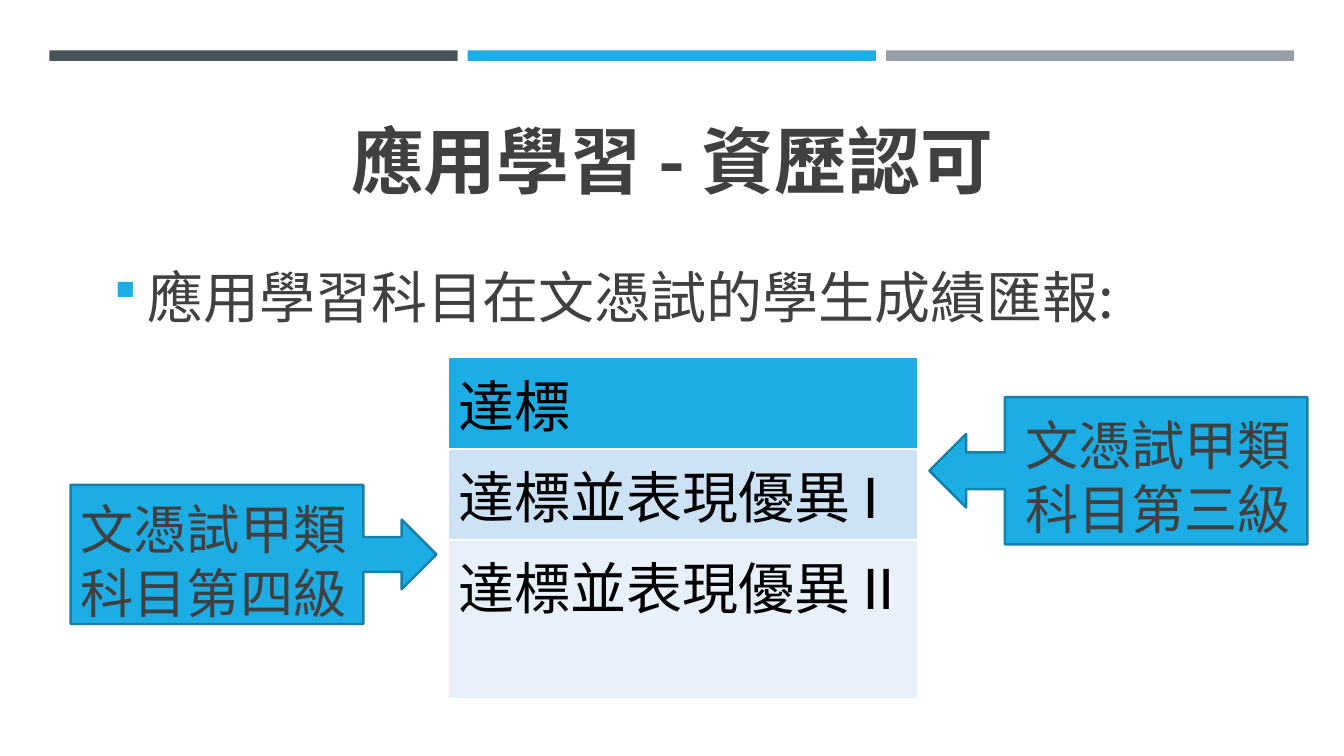
from pptx import Presentation
from pptx.dml.color import RGBColor
from pptx.enum.shapes import MSO_SHAPE as Kind
from pptx.enum.text import MSO_ANCHOR as Anchor, MSO_AUTO_SIZE as Fit, PP_ALIGN as Align
from pptx.oxml import parse_xml
from pptx.oxml.ns import nsdecls, qn
from pptx.util import Pt

INK, SKY, EDGE = "404040", "1CADE4", "1580A9"
CJK, LATIN = "Noto Sans CJK TC", "Lato"


def tint(part, code):
    """Give a fill a solid colour."""
    part.solid()
    part.fore_color.rgb = RGBColor.from_string(code)


def write(frame, text, size=40, color=INK, font=CJK, bold=False,
          align=Align.LEFT, anchor=Anchor.MIDDLE, space=None):
    """Fill a text frame, one paragraph per line of text."""
    frame.text = text
    frame.word_wrap = True
    frame.vertical_anchor = anchor
    for para in frame.paragraphs:
        para.alignment = align
        para.line_spacing = space
        for run in para.runs:
            face = run.font
            face.size, face.bold, face.name = Pt(size), bold, font
            tint(face.fill, color)
            east = face._element.makeelement(qn("a:ea"), {"typeface": CJK})
            face._element.find(qn("a:latin")).addnext(east)


def place(shape, *box):
    shape.left, shape.top, shape.width, shape.height = map(Pt, box)


class Page:
    def __init__(self, deck):
        self.slide = deck.slides.add_slide(deck.slide_layouts[1])
        self.shapes = self.slide.shapes

    def form(self, kind, box, fill, line=None):
        shape = self.shapes.add_shape(kind, *map(Pt, box))
        shape.shadow.inherit = False
        tint(shape.fill, fill)
        if line:
            tint(shape.line.fill, line)
            shape.line.width = Pt(1.75)
        else:
            shape.line.fill.background()
        return shape

    def title(self, text, box):
        head = self.shapes.title
        place(head, *box)
        head.text_frame.auto_size = Fit.NONE
        write(head.text_frame, text, size=52, bold=True,
              align=Align.CENTER, anchor=Anchor.BOTTOM)

    def bullet(self, text, box):
        body = self.slide.placeholders[1]
        place(body, *box)
        body.text_frame.auto_size = Fit.NONE
        write(body.text_frame, text, space=1.1)
        para = body.text_frame.paragraphs[0]
        para.space_after = Pt(6)
        props = para._p.get_or_add_pPr()
        props.set("marL", str(Pt(24)))
        props.set("indent", str(Pt(-24)))
        names = nsdecls("a")
        for mark in (f'<a:buClr {names}><a:srgbClr val="{SKY}"/></a:buClr>',
                     f'<a:buSzPct {names} val="92000"/>',
                     f'<a:buFont {names} typeface="Wingdings"/>',
                     f'<a:buChar {names} char="§"/>'):
            props.append(parse_xml(mark))

    def table(self, rows, left, top, width):
        """Draw one column; rows hold text, fill and height."""
        total = sum(tall for *_, tall in rows)
        grid = self.shapes.add_table(
            len(rows), 1, Pt(left), Pt(top), Pt(width), Pt(total)).table
        for at, (text, fill, tall) in enumerate(rows):
            grid.rows[at].height = Pt(tall)
            cell = grid.cell(at, 0)
            tint(cell.fill, fill)
            write(cell.text_frame, text, color="000000", font=LATIN,
                  anchor=Anchor.TOP)

    def callout(self, kind, text, box, share, inset):
        shape = self.form(kind, box, SKY, EDGE)
        shape.adjustments[3] = share
        frame = shape.text_frame
        write(frame, text, size=38, space=Pt(46))
        frame.margin_left, frame.margin_right = Pt(inset), Pt(0)
        frame.margin_top = Pt(11)


def main():
    deck = Presentation()
    deck.slide_width, deck.slide_height = Pt(960), Pt(540)
    page = Page(deck)
    for at, fill in enumerate(("465359", SKY, "969FA7")):
        page.form(Kind.RECTANGLE, (35.3 + 298.8 * at, 36, 291.6, 7.5), fill)
    page.title("應用學習 - 資歷認可", (46, 55.5, 868, 93.5))
    page.bullet("應用學習科目在文憑試的學生成績匯報:", (74, 173, 868, 72))
    page.table([("達標", SKY, 65),
                ("達標並表現優異 I", "CDE3F5", 65),
                ("達標並表現優異 II", "E8F1FA", 113)], 320.4, 255.6, 334.8)
    page.callout(Kind.LEFT_ARROW_CALLOUT, "文憑試甲類\n科目第三級",
                 (663.8, 283.7, 270, 105.1), 0.8, 14.4)
    page.callout(Kind.RIGHT_ARROW_CALLOUT, "文憑試甲類\n科目第四級",
                 (50.4, 346.3, 261.4, 99.4), 0.8, 7.2)
    deck.save("out.pptx")


if __name__ == "__main__":
    main()
